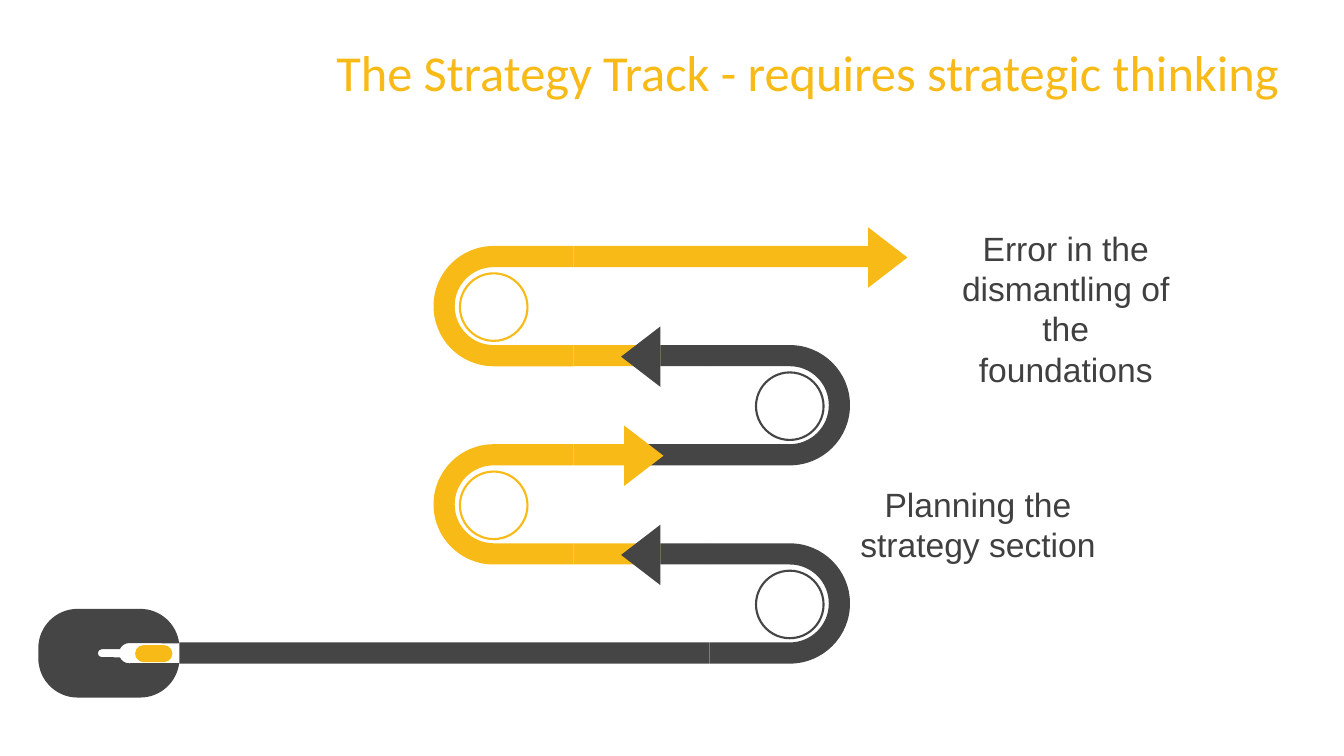
from dataclasses import dataclass
from math import ceil, cos, radians, sin, tan

from lxml.etree import SubElement
from pptx import Presentation
from pptx.dml.color import RGBColor
from pptx.enum.shapes import MSO_SHAPE
from pptx.enum.text import MSO_ANCHOR, PP_ALIGN
from pptx.oxml.ns import qn
from pptx.util import Inches, Pt


@dataclass(frozen=True)
class Theme:
    yellow: str = "F8BA16"
    dark: str = "454545"
    text: str = "404040"
    title_font: str = "Calibri"
    body_font: str = "Arial"
    title_size: int = 36
    body_size: int = 24
    ring_width: float = 1.5


THEME = Theme()
BAND = 0.21                 # thickness of the track
PITCH = 2.95 / 3            # distance between lanes
BEND_W = 1.39
HEAD_W, HEAD_L = 0.6, 0.39  # arrowhead
RING = 0.67


def paint(sp, fill=None, line=None):
    sp.shadow.inherit = False
    if fill:
        sp.fill.solid()
        sp.fill.fore_color.rgb = RGBColor.from_string(fill)
    else:
        sp.fill.background()
    if line:
        sp.line.color.rgb = RGBColor.from_string(line)
        sp.line.width = Pt(THEME.ring_width)
    else:
        sp.line.fill.background()
    return sp


def add_preset(shapes, kind, x, y, w, h, **look):
    sp = shapes.add_shape(kind, Inches(x), Inches(y), Inches(w), Inches(h))
    return paint(sp, **look)


def add_outline(shapes, segments, fill):
    """Segments hold one point for a line, three for a Bézier curve."""
    pts = [(Inches(x), Inches(y)) for seg in segments for x, y in seg]
    builder = shapes.build_freeform(*pts[0])
    builder.add_line_segments(pts[1:], close=True)
    sp = paint(builder.convert_to_shape(), fill=fill)

    # Join the three points of each curve
    lines = iter(list(sp._element.iter(qn("a:lnTo"))))
    for seg in segments[1:]:
        parts = [next(lines) for _ in seg]
        if len(parts) == 3:
            path_el = parts[0].getparent()
            curve = SubElement(path_el, qn("a:cubicBezTo"))
            path_el.replace(parts[0], curve)
            for part in parts:
                curve.append(part[0])
            for part in parts[1:]:
                path_el.remove(part)
    return sp


def arc(cx, cy, r, start, end):
    """A line to the start of an arc, then its curves; 0 is right, 90 is down."""
    count = ceil(abs(end - start) / 90)
    step = radians(end - start) / count
    k = 4 / 3 * tan(step / 4)

    def at(a, pull=0):
        return (cx + r * (cos(a) - pull * sin(a)), cy + r * (sin(a) + pull * cos(a)))

    a = radians(start)
    segments = [(at(a),)]
    for _ in range(count):
        segments.append((at(a, k), at(a + step, -k), at(a + step)))
        a += step
    return segments


def write(tf, text, *, font, size, color, align, spacing=None):
    tf.word_wrap = True
    tf.vertical_anchor = MSO_ANCHOR.TOP
    p = tf.paragraphs[0]
    p.alignment = align
    p.line_spacing = spacing
    r = p.add_run()
    r.text = text
    r.font.name = font
    r.font.size = Pt(size)
    r.font.color.rgb = RGBColor.from_string(color)


def add_title(s, x, y, w, h, text):
    title = s.shapes.title
    title.left, title.top, title.width, title.height = map(Inches, (x, y, w, h))
    tf = title.text_frame
    tf.margin_top = Inches(0.06)
    write(tf, text, font=THEME.title_font, size=THEME.title_size,
          color=THEME.yellow, align=PP_ALIGN.RIGHT, spacing=0.9)


def add_label(s, x, y, w, h, text):
    tf = s.shapes.add_textbox(*map(Inches, (x, y, w, h))).text_frame
    tf.margin_left = tf.margin_right = 0
    write(tf, text, font=THEME.body_font, size=THEME.body_size,
          color=THEME.text, align=PP_ALIGN.CENTER)


def add_loop(s, x, y, color, turns_left, lane_start, tip):
    """A bend at (x, y), with a lane leading in below and an arrow out above."""
    shapes = s.shapes.add_group_shape().shapes
    outer = (PITCH + BAND) / 2
    cy = y + outer
    way = 1 if turns_left else -1
    cx = x + outer if turns_left else x + BEND_W - outer
    end = x + BEND_W if turns_left else x

    # Lanes
    base = tip - way * HEAD_L
    for lane_y, far in ((y, base), (y + PITCH, lane_start)):
        add_preset(shapes, MSO_SHAPE.RECTANGLE, min(end, far), lane_y,
                   abs(far - end), BAND, fill=color)

    # Bend
    sweep = (-90, -270) if turns_left else (-90, 90)
    segments = [((end, y),), *arc(cx, cy, outer, *sweep),
                ((end, y + PITCH + BAND),), ((end, y + PITCH),),
                *arc(cx, cy, outer - BAND, *reversed(sweep)), ((end, y + BAND),)]
    add_outline(shapes, segments, color)

    # Arrowhead
    mid = (tip + base) / 2
    head = add_preset(shapes, MSO_SHAPE.ISOSCELES_TRIANGLE, mid - HEAD_W / 2,
                      y + BAND / 2 + 0.01 - HEAD_L / 2, HEAD_W, HEAD_L, fill=color)
    head.rotation = 90 * way

    # Ring inside the bend
    add_preset(s.shapes, MSO_SHAPE.OVAL, cx - RING / 2, cy + 0.01 - RING / 2,
               RING, RING, line=color)


def add_track(s, x, y, w):
    """Four loops, alternating sides, from the top down."""
    right = x + w - BEND_W
    loops = [(True, 6.55, 9), (False, 6.19, 6.16),
             (True, 6.55, 6.58), (False, 1.78, 6.16)]
    for i, (turns_left, lane_start, tip) in enumerate(loops):
        add_loop(s, x if turns_left else right, y + i * PITCH,
                 THEME.yellow if turns_left else THEME.dark,
                 turns_left, lane_start, tip)


def add_mouse(s, x, y, w, h):
    shapes = s.shapes.add_group_shape().shapes
    r, slot_r, wire_r = 0.39, 0.1, 0.04
    cy = y + h / 2
    slot_x, wire_x = x + 0.9, x + 0.63

    # Body with a slot cut in from the right
    segments = [*arc(x + r, y + h - r, r, 90, 180),
                *arc(x + r, y + r, r, 180, 270),
                *arc(x + w - r, y + r, r, -90, -7),
                *arc(slot_x, cy, slot_r, 270, 204),
                *arc(wire_x, cy, wire_r, 270, 90),
                *arc(slot_x, cy, slot_r, 156, 90),
                *arc(x + w - r, y + h - r, r, 7, 90)]
    add_outline(shapes, segments, THEME.dark)

    # Wheel
    wheel = add_preset(shapes, MSO_SHAPE.ROUNDED_RECTANGLE, x + 0.96, cy - 0.08,
                       0.37, 0.17, fill=THEME.yellow)
    wheel.adjustments[0] = 0.5


def main():
    prs = Presentation()
    prs.slide_width, prs.slide_height = Inches(13.33), Inches(7.5)
    s = prs.slides.add_slide(prs.slide_layouts[5])
    add_title(s, 0.4, 0.42, 12.39, 0.79,
              "The Strategy Track - requires strategic thinking")
    add_track(s, 4.3, 2.44, 4.13)
    add_mouse(s, 0.38, 6.04, 1.4, 0.88)
    add_label(s, 9.53, 2.21, 2.08, 0.91, "Error in the dismantling of the foundations")
    add_label(s, 8.25, 4.75, 2.9, 0.5, "Planning the strategy section")
    prs.save("out.pptx")


if __name__ == "__main__":
    main()
